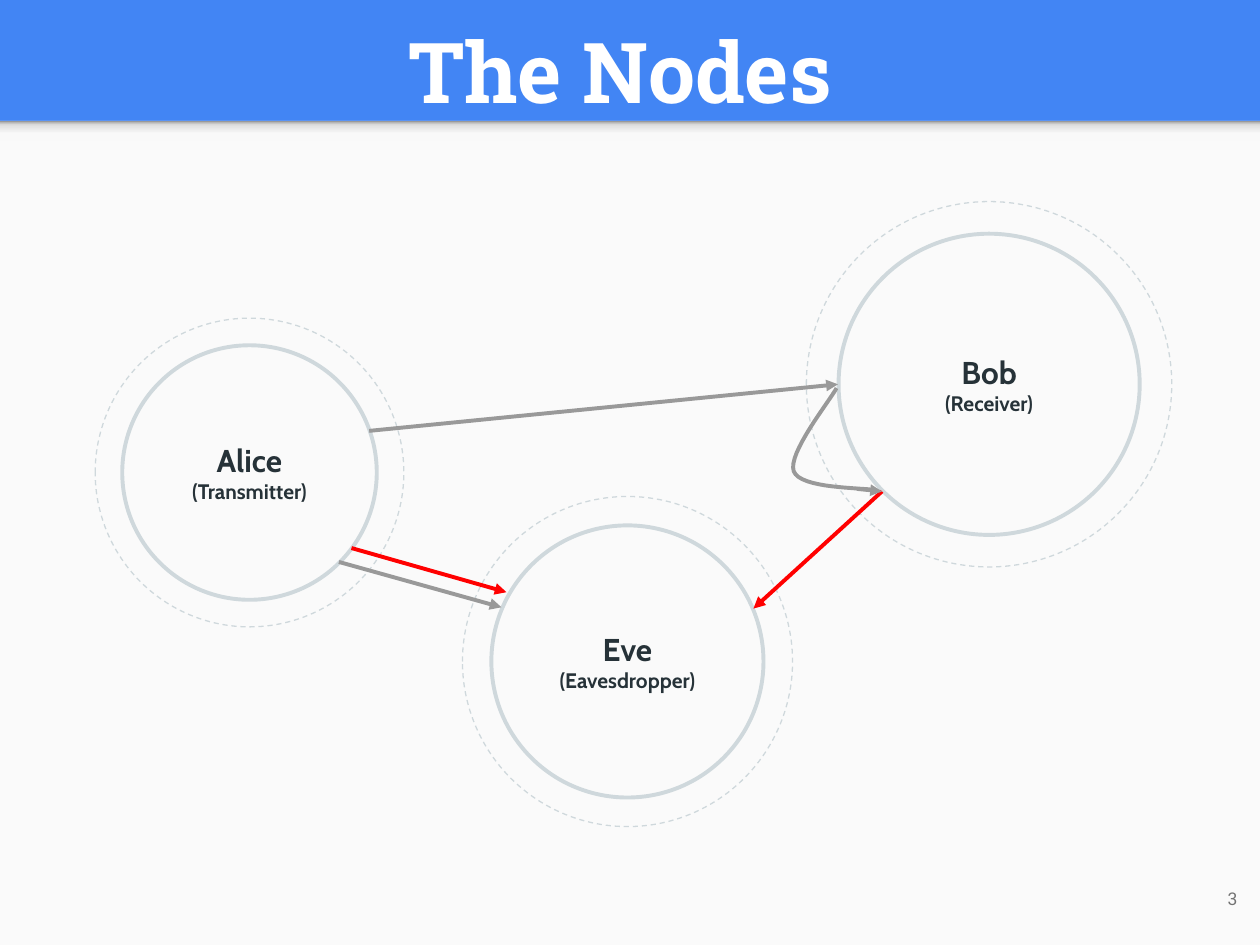
from lxml.etree import SubElement
from pptx import Presentation
from pptx.dml.color import RGBColor
from pptx.enum.dml import MSO_LINE
from pptx.enum.shapes import MSO_CONNECTOR, MSO_SHAPE
from pptx.enum.text import MSO_ANCHOR, MSO_AUTO_SIZE, PP_ALIGN
from pptx.oxml.ns import qn
from pptx.util import Inches, Pt

GREY, RED, RING, INK = "999999", "FF0000", "CFD8DC", "263238"
FADE = [(0, "F9F9F9"), (36, "F9F9F9"), (80, "DEDEDE"), (100, "999999")]
NODES = [
    ("Alice", "(Transmitter)", 1.98, 3.75, 2.02, 2.45),
    ("Eve", "(Eavesdropper)", 4.98, 5.25, 2.16, 2.62),
    ("Bob", "(Receiver)", 7.85, 3.05, 2.39, 2.9),
]
LINKS = [
    (2.93, 3.42, 6.65, 3.05, GREY),
    (7, 3.9, 5.98, 4.83, RED),
    (2.69, 4.46, 3.98, 4.82, GREY),
    (6.8, 3.88, 7, 3.9, GREY),
    (2.79, 4.35, 4.02, 4.7, RED),
]
LOOP = [
    [(6.64, 3.08), (6.58, 3.19), (6.25, 3.6), (6.3, 3.74)],
    [(6.3, 3.74), (6.35, 3.88), (6.84, 3.87), (6.95, 3.89)],
]


def color(code):
    return RGBColor.from_string(code)


def stroke(line, code, width):
    line.color.rgb = color(code)
    line.width = Pt(width)


def write(frame, text, size, font, code, bold=False, align=PP_ALIGN.LEFT):
    para = frame.paragraphs[0]
    if para.runs:
        para = frame.add_paragraph()
    para.alignment = align
    run = para.add_run()
    run.text = text
    run.font.size = Pt(size)
    run.font.name = font
    run.font.bold = bold
    run.font.color.rgb = color(code)


def setup(frame):
    frame.word_wrap = True
    frame.auto_size = MSO_AUTO_SIZE.NONE
    frame.vertical_anchor = MSO_ANCHOR.MIDDLE
    frame.margin_left = frame.margin_right = Inches(0.1)
    frame.margin_top = frame.margin_bottom = Inches(0.1)
    return frame


def panel(slide, top, height):
    shape = slide.shapes.add_shape(
        MSO_SHAPE.RECTANGLE, 0, Inches(top), Inches(10), Inches(height))
    shape.shadow.inherit = False
    shape.line.fill.background()
    shape.fill.solid()
    shape.fill.fore_color.rgb = color("FAFAFA")
    return shape


def fade(shape, stops):
    shape.fill.gradient()
    grad = shape.fill._xPr.find(qn("a:gradFill"))
    for child in list(grad):
        grad.remove(child)
    group = SubElement(grad, qn("a:gsLst"))
    for spot, code in stops:
        stop = SubElement(group, qn("a:gs"), pos=str(spot * 1000))
        SubElement(stop, qn("a:srgbClr"), val=code)
    SubElement(grad, qn("a:lin"), ang="16200000", scaled="0")


def circle(slide, x, y, size, width):
    shape = slide.shapes.add_shape(
        MSO_SHAPE.OVAL, Inches(x - size / 2), Inches(y - size / 2),
        Inches(size), Inches(size))
    shape.shadow.inherit = False
    shape.fill.background()
    stroke(shape.line, RING, width)
    return shape


def node(slide, name, role, x, y, inner, outer):
    circle(slide, x, y, outer, 0.75).line.dash_style = MSO_LINE.DASH
    frame = setup(circle(slide, x, y, inner, 2.25).text_frame)
    for text, size in ((name, 18), (role, 12)):
        write(frame, text, size, "Cabin", INK, bold=True,
              align=PP_ALIGN.CENTER)


def arrow(slide, x1, y1, x2, y2, code):
    link = slide.shapes.add_connector(
        MSO_CONNECTOR.STRAIGHT, Inches(x1), Inches(y1), Inches(x2), Inches(y2))
    stroke(link.line, code, 2.25)
    SubElement(link.line._get_or_add_ln(), qn("a:tailEnd"), type="triangle")
    SubElement(link._element.spPr, qn("a:effectLst"))


def bend(a, b, c, d, t):
    u = 1 - t
    return tuple(
        Inches(u**3 * p + 3 * u * u * t * q + 3 * u * t * t * r + t**3 * s)
        for p, q, r, s in zip(a, b, c, d))


def curve(slide, parts, code, steps=16):
    dots = [bend(*part, n / steps) for part in parts
            for n in range(1, steps + 1)]
    x, y = parts[0][0]
    build = slide.shapes.build_freeform(Inches(x), Inches(y))
    build.add_line_segments(dots, close=False)
    shape = build.convert_to_shape()
    shape.shadow.inherit = False
    shape.fill.background()
    stroke(shape.line, code, 2.25)


def place(shape, left, top, width, height):
    shape.left, shape.top = Inches(left), Inches(top)
    shape.width, shape.height = Inches(width), Inches(height)


def main():
    deck = Presentation()
    deck.slide_width, deck.slide_height = Inches(10), Inches(7.5)
    slide = deck.slides.add_slide(deck.slide_layouts[5])
    slide.background.fill.solid()
    slide.background.fill.fore_color.rgb = color("4285F4")
    panel(slide, 0.96, 6.54)
    fade(panel(slide, 0.96, 0.16), FADE)

    title = slide.shapes.title
    place(title, 3.14, 0, 3.72, 1.11)
    write(setup(title.text_frame), "The Nodes", 48, "Roboto Slab", "FFFFFF",
          bold=True)

    for item in NODES:
        node(slide, *item)
    for link in LINKS:
        arrow(slide, *link)
    curve(slide, LOOP, GREY)

    box = slide.shapes.add_textbox(
        Inches(9.32), Inches(6.85), Inches(0.6), Inches(0.57))
    write(setup(box.text_frame), "3", 10, "Roboto", "737373",
          align=PP_ALIGN.RIGHT)
    deck.save("out.pptx")


if __name__ == "__main__":
    main()
